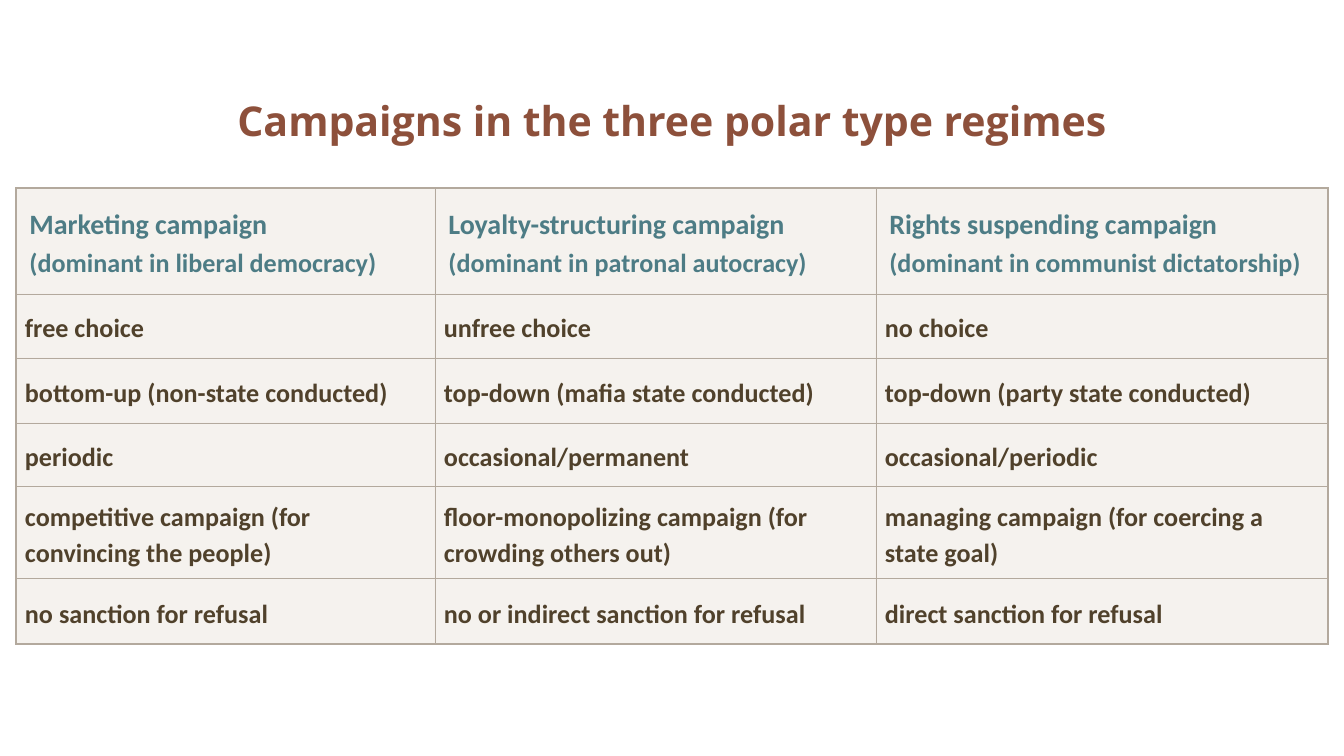
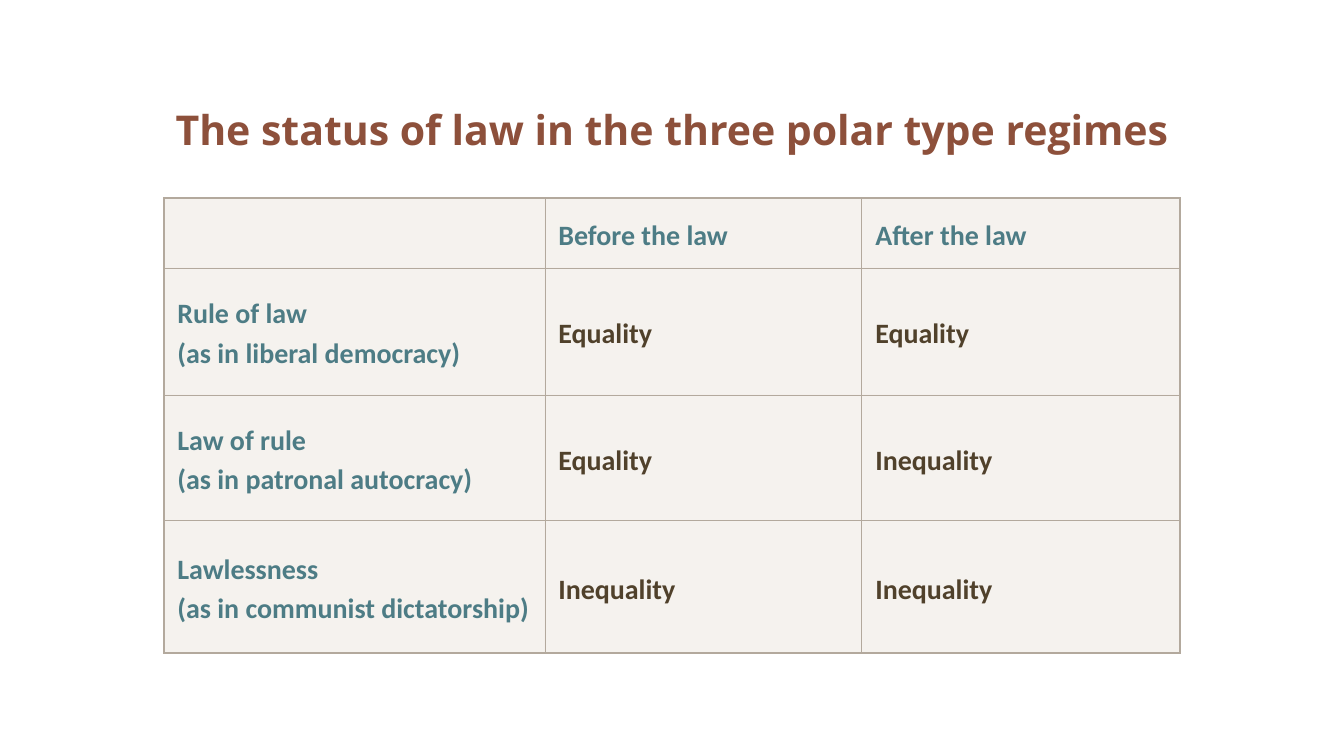
from lxml.etree import Element, SubElement
from pptx import Presentation
from pptx.dml.color import RGBColor
from pptx.enum.text import MSO_ANCHOR as Anchor, PP_ALIGN as Align
from pptx.oxml.ns import qn
from pptx.util import Pt

BROWN = RGBColor(0x8D, 0x50, 0x3B)
TEAL = RGBColor(0x4D, 0x7C, 0x85)
DARK = RGBColor(0x50, 0x41, 0x2B)
CREAM = RGBColor(0xEF, 0xEA, 0xE4)
TAUPE = RGBColor(0xB3, 0xA9, 0x9D)

TITLE_FONT, TABLE_FONT = "Open Sans", "Calibri"
TITLE_SIZE, HEADING_SIZE = 22, 15
OUTER_WIDTH, INNER_WIDTH = 1, 0.5
FILL_OPACITY = 60
LINE_SPACING = 1.15
SLIDE_WIDTH, SLIDE_HEIGHT = 1344, 756
TITLE_LEFT, TITLE_WIDTH = 16, 1312

# In a cell, a tuple holds paragraphs and a newline is a line break.
SLIDES = [
    {
        "title": "Campaigns in the three polar type regimes",
        "title_top": 52,
        "title_height": 136,
        "table_at": (16, 188),
        "columns": (419, 441, 452),
        "rows": (106, 64, 65, 64, 92, 65),
        "heading_column": False,
        "body_size": 14,
        "body_margins": (9, 1, 9, 0),
        "cells": [
            ("Marketing campaign\n(dominant in liberal democracy)",
             "Loyalty-structuring campaign\n(dominant in patronal autocracy)",
             "Rights suspending campaign\n(dominant in communist dictatorship)"),
            ("free choice", "unfree choice", "no choice"),
            ("bottom-up (non-state conducted)",
             "top-down (mafia state conducted)",
             "top-down (party state conducted)"),
            ("periodic", "occasional/permanent", "occasional/periodic"),
            ("competitive campaign (for convincing the people)",
             "floor-monopolizing campaign (for crowding others out)",
             "managing campaign (for coercing a state goal)"),
            ("no sanction for refusal",
             "no or indirect sanction for refusal",
             "direct sanction for refusal"),
        ],
    },
    {
        "title": "The status of law in the three polar type regimes",
        "title_top": 62,
        "title_height": 134,
        "table_at": (164, 198),
        "columns": (381, 317, 318),
        "rows": (70, 127, 126, 132),
        "heading_column": True,
        "body_size": 15,
        "body_margins": None,
        "cells": [
            ("", "Before the law", "After the law"),
            (("Rule of law", "(as in liberal democracy)"), "Equality", "Equality"),
            (("Law of rule", "(as in patronal autocracy)"), "Equality", "Inequality"),
            (("Lawlessness", "(as in communist dictatorship)"), "Inequality", "Inequality"),
        ],
    },
]


def px(length):
    return round(length * 914400 / 134.4)


def add_run(paragraph, text, font_name, size, color):
    run = paragraph.add_run()
    run.text = text
    run.font.name = font_name
    run.font.size = Pt(size)
    run.font.bold = True
    run.font.color.rgb = color


def add_title(slide, content):
    box = slide.shapes.add_textbox(px(TITLE_LEFT), px(content["title_top"]),
                                   px(TITLE_WIDTH), px(content["title_height"]))
    frame = box.text_frame
    frame.word_wrap = True
    frame.vertical_anchor = Anchor.MIDDLE
    paragraph = frame.paragraphs[0]
    paragraph.alignment = Align.CENTER
    add_run(paragraph, content["title"], TITLE_FONT, TITLE_SIZE, BROWN)


def paint_cell(cell, outer_sides):
    cell.fill.solid()
    cell.fill.fore_color.rgb = CREAM
    properties = cell._tc.get_or_add_tcPr()
    fill_color = properties.find(qn("a:solidFill")).find(qn("a:srgbClr"))
    SubElement(fill_color, qn("a:alpha"), val=str(FILL_OPACITY * 1000))
    for index, (side, outer) in enumerate(zip("LRTB", outer_sides)):
        width = Pt(OUTER_WIDTH if outer else INNER_WIDTH)
        border = Element(qn("a:ln" + side), w=str(width))
        line_fill = SubElement(border, qn("a:solidFill"))
        SubElement(line_fill, qn("a:srgbClr"), val=str(TAUPE))
        properties.insert(index, border)


def write_cell(cell, text, color, body_size, heading):
    frame = cell.text_frame
    paragraphs = text if isinstance(text, tuple) else (text,)
    size = HEADING_SIZE if heading else body_size
    for index, paragraph_text in enumerate(paragraphs):
        paragraph = frame.add_paragraph() if index else frame.paragraphs[0]
        paragraph.line_spacing = LINE_SPACING
        for number, line in enumerate(paragraph_text.split("\n")):
            if number:
                paragraph.add_line_break()
            if line:
                add_run(paragraph, line, TABLE_FONT, size, color)
            size = body_size


def add_regime_table(slide, content):
    columns, rows = content["columns"], content["rows"]
    left, top = content["table_at"]
    table = slide.shapes.add_table(len(rows), len(columns), px(left), px(top),
                                   px(sum(columns)), px(sum(rows))).table
    table.first_row = table.horz_banding = False
    for column, width in zip(table.columns, columns):
        column.width = px(width)
    for row, height in zip(table.rows, rows):
        row.height = px(height)
    for r, texts in enumerate(content["cells"]):
        for c, text in enumerate(texts):
            cell = table.cell(r, c)
            cell.vertical_anchor = Anchor.MIDDLE
            heading = r == 0 or (c == 0 and content["heading_column"])
            if content["body_margins"] and not heading:
                (cell.margin_left, cell.margin_top, cell.margin_right,
                 cell.margin_bottom) = map(px, content["body_margins"])
            paint_cell(cell, (c == 0, c == len(columns) - 1, r == 0, r == len(rows) - 1))
            write_cell(cell, text, TEAL if heading else DARK, content["body_size"], heading)


def main():
    presentation = Presentation()
    presentation.slide_width = px(SLIDE_WIDTH)
    presentation.slide_height = px(SLIDE_HEIGHT)
    for content in SLIDES:
        slide = presentation.slides.add_slide(presentation.slide_layouts[6])
        add_title(slide, content)
        add_regime_table(slide, content)
    presentation.save("out.pptx")


if __name__ == "__main__":
    main()
